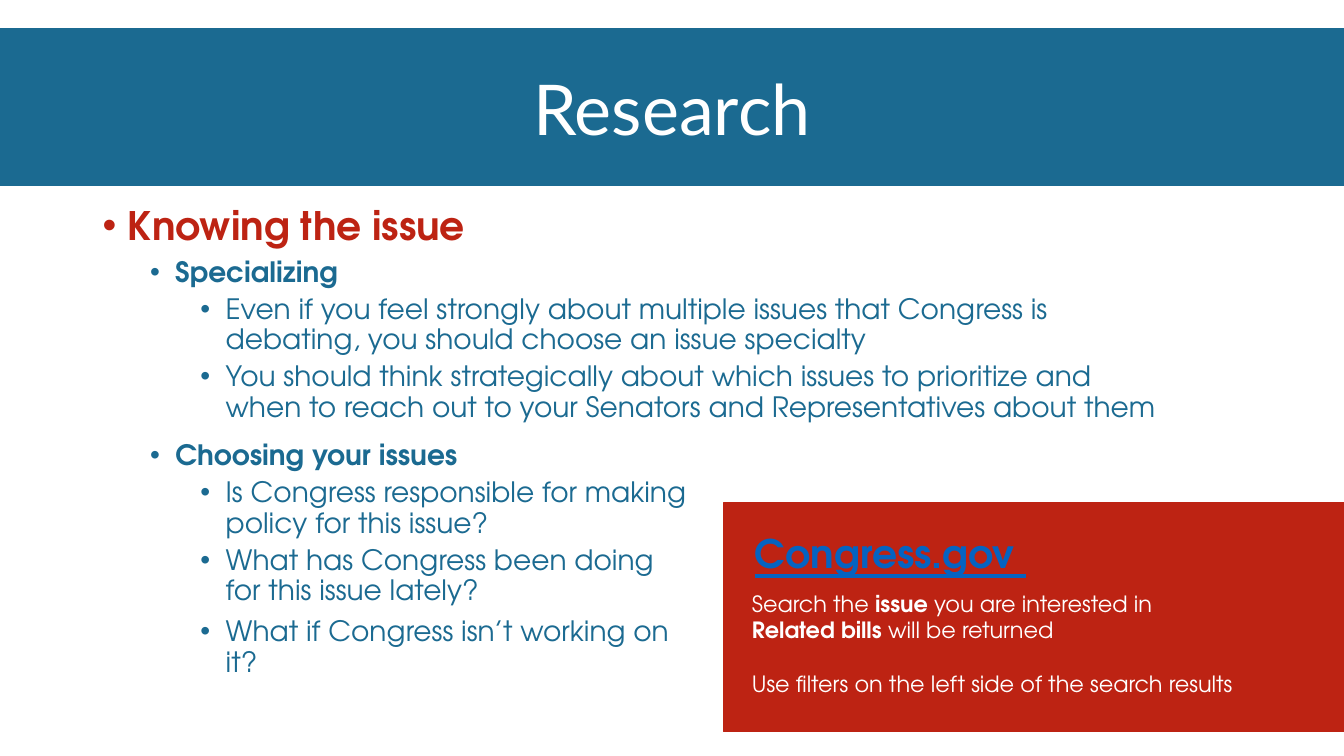
from lxml.etree import SubElement
from pptx import Presentation
from pptx.dml.color import RGBColor
from pptx.enum.shapes import MSO_SHAPE as Shape
from pptx.enum.text import MSO_ANCHOR as Anchor, PP_ALIGN as Align
from pptx.oxml.ns import qn
from pptx.util import Inches, Pt

BLUE, RED, WHITE, LINK = "1B6A91", "BD2313", "FFFFFF", "0563C1"
COLUMNS, ROWS = 40, 30


def colour(hex_value):
    return RGBColor.from_string(hex_value)


def apply(target, formats):
    for name, value in formats.items():
        setattr(target, name, value)


class Page:
    """Holds the style and the current slide; lengths are grid columns and rows."""

    body_font = "TeX Gyre Adventor"
    title_font = "Lato"

    def __init__(self, deck):
        self.column = deck.slide_width / COLUMNS
        self.row = deck.slide_height / ROWS
        self.slide = deck.slides.add_slide(deck.slide_layouts[6])

    def area(self, left, top, width, height):
        return (round(left * self.column), round(top * self.row),
                round(width * self.column), round(height * self.row))

    def block(self, place, fill, line_width, **frame_format):
        block = self.slide.shapes.add_shape(Shape.RECTANGLE, *self.area(*place))
        block.shadow.inherit = False
        block.fill.solid()
        block.fill.fore_color.rgb = colour(fill)
        block.line.color.rgb = colour(fill)
        block.line.width = Pt(line_width)
        apply(block.text_frame, {"word_wrap": True, **frame_format})
        return block.text_frame

    def paragraph(self, frame, runs, hex_value, size, font=body_font, indent=0,
                  **paragraph_format):
        """Write runs given as (text, run format) pairs."""
        first = frame.paragraphs[0]
        paragraph = frame.add_paragraph() if first.runs else first
        apply(paragraph, {"alignment": Align.LEFT, **paragraph_format})
        paragraph._p.get_or_add_pPr().set("marL", str(Inches(indent)))
        for text, run_format in runs:
            run = paragraph.add_run()
            run.text = text
            apply(run.font, {"name": font, "size": Pt(size), "bold": False, **run_format})
            run.font.color.rgb = colour(hex_value)
        return paragraph

    def outline(self, place, heading, points=(), hex_value=BLUE, size=20):
        """Write a bold bulleted heading over (text, space before) points."""
        frame = self.slide.shapes.add_textbox(*self.area(*place)).text_frame
        frame.word_wrap = True
        items = [(heading, 10, True, 0)]
        items += [(text, gap, False, 1) for text, gap in points]
        for text, gap, bold, level in items:
            paragraph = self.paragraph(
                frame, [(text, {"bold": bold})], hex_value, size,
                indent=0.25 + 0.5 * level,
                level=level, line_spacing=0.9, space_before=Pt(gap))
            properties = paragraph._p.get_or_add_pPr()
            properties.set("indent", str(Inches(-0.25)))
            SubElement(properties, qn("a:buFont")).set("typeface", "Arial")
            SubElement(properties, qn("a:buChar")).set("char", "•")


def main():
    deck = Presentation()
    deck.slide_width, deck.slide_height = Inches(13.33), Inches(7.5)
    page = Page(deck)

    # Title banner
    banner = page.block((0, 1.16, COLUMNS, 6.2), BLUE, 1.5, vertical_anchor=Anchor.MIDDLE)
    page.paragraph(banner, [("Research", {})], WHITE, 50, font=page.title_font,
                   alignment=Align.CENTER)

    # Outline of the topic
    page.outline((2.76, 8, 34.5, 2), "Knowing the issue", hex_value=RED, size=28)
    page.outline((4.17, 10.04, 30.75, 7), "Specializing", [
        ("Even if you feel strongly about multiple issues that Congress is debating, "
         "you should choose an issue specialty", 5),
        ("You should think strategically about which issues to prioritize and when to "
         "reach out to your Senators and Representatives about them", 5),
    ])
    page.outline((4.17, 17.32, 16.68, 11), "Choosing your issues", [
        ("Is Congress responsible for making policy for this issue?", 5),
        ("What has Congress been doing for this issue lately?", 5),
        ("What if Congress isn’t working on it?", 8),
    ])

    # Search tip panel
    tip = page.block((21.54, 19.96, 18.46, 9.08), RED, 1, vertical_anchor=Anchor.TOP,
                     margin_left=Inches(0.28), margin_top=Inches(0.26))
    strong = {"bold": True}
    page.paragraph(tip, [("Congress.gov ", {"bold": True, "underline": True})], LINK, 28,
                   indent=0.03)
    advice = [
        ([("Search the ", {}), ("issue", strong), (" you are interested in", {})], 9.6),
        ([("Related bills ", strong), ("will be returned", {})], 0),
        ([("Use filters on the left side of the search results", {})], 19.2),
    ]
    for runs, gap in advice:
        page.paragraph(tip, runs, WHITE, 16, space_before=Pt(gap))

    deck.save("out.pptx")


if __name__ == "__main__":
    main()
